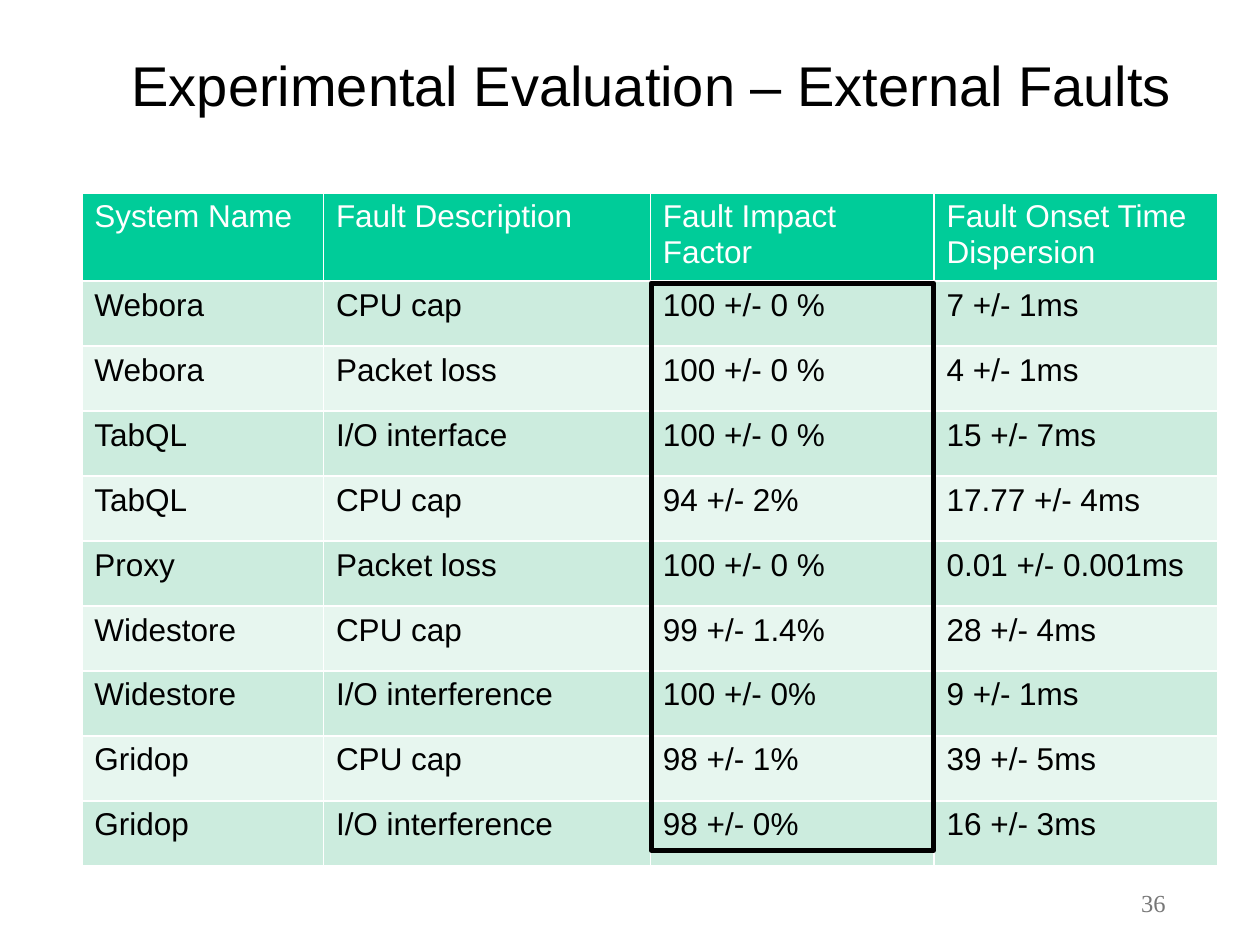
from lxml import etree
from pptx import Presentation
from pptx.dml.color import RGBColor
from pptx.enum.shapes import MSO_SHAPE
from pptx.enum.text import MSO_ANCHOR, PP_ALIGN
from pptx.oxml.ns import qn
from pptx.util import Cm, Pt

RECT = MSO_SHAPE.RECTANGLE
MIDDLE = MSO_ANCHOR.MIDDLE
LEFT, CENTER, RIGHT = PP_ALIGN.LEFT, PP_ALIGN.CENTER, PP_ALIGN.RIGHT

BLACK = RGBColor(0x00, 0x00, 0x00)
WHITE = RGBColor(0xFF, 0xFF, 0xFF)
GREY = RGBColor(0x77, 0x77, 0x77)
GREEN = RGBColor(0x00, 0xCC, 0x99)
BANDS = (RGBColor(0xE7, 0xF6, 0xEF), RGBColor(0xCC, 0xEC, 0xDE))

COL_WIDTHS = (4.87, 6.59, 5.72, 5.71)
HEADER_HEIGHT, ROW_HEIGHT = 1.77, 1.31
ROWS = (
    ("System Name", "Fault Description", "Fault Impact Factor", "Fault Onset Time Dispersion"),
    ("Webora", "CPU cap", "100 +/- 0 %", "7 +/- 1ms"),
    ("Webora", "Packet loss", "100 +/- 0 %", "4 +/- 1ms"),
    ("TabQL", "I/O interface", "100 +/- 0 %", "15 +/- 7ms"),
    ("TabQL", "CPU cap", "94 +/- 2%", "17.77 +/- 4ms"),
    ("Proxy", "Packet loss", "100 +/- 0 %", "0.01 +/- 0.001ms"),
    ("Widestore", "CPU cap", "99 +/- 1.4%", "28 +/- 4ms"),
    ("Widestore", "I/O interference", "100 +/- 0%", "9 +/- 1ms"),
    ("Gridop", "CPU cap", "98 +/- 1%", "39 +/- 5ms"),
    ("Gridop", "I/O interference", "98 +/- 0%", "16 +/- 3ms"),
)


class SlideBuilder:
    """Hold the text style and the current slide, and add its elements."""

    def __init__(self, prs):
        self.style = {"name": "Arial", "size": Pt(18), "bold": False}
        self.slide = prs.slides.add_slide(prs.slide_layouts[5])

    def set_text(self, tf, text, color, align, **fmt):
        tf.word_wrap = True
        p = tf.paragraphs[0]
        p.alignment = align
        r = p.add_run()
        r.text = text
        for key, value in {**self.style, **fmt}.items():
            setattr(r.font, key, value)
        r.font.color.rgb = color

    def title(self, text, x, y, w, h):
        sp = self.slide.shapes.title
        box = {"left": Cm(x), "top": Cm(y), "width": Cm(w), "height": Cm(h)}
        for key, value in box.items():
            setattr(sp, key, value)
        sp.text_frame.vertical_anchor = MIDDLE
        self.set_text(sp.text_frame, text, BLACK, CENTER, size=Pt(32))

    def page_number(self, text, x, y, w, h):
        sp = self.slide.shapes.add_textbox(Cm(x), Cm(y), Cm(w), Cm(h))
        sp.text_frame.vertical_anchor = MIDDLE
        self.set_text(sp.text_frame, text, GREY, RIGHT, name="Times New Roman", size=Pt(14))

    def borders(self, cell, color, width):
        tc_pr = cell._tc.get_or_add_tcPr()
        for side in ("a:lnL", "a:lnR", "a:lnT", "a:lnB"):
            ln = etree.SubElement(tc_pr, qn(side), w=str(width))
            fill = etree.SubElement(ln, qn("a:solidFill"))
            etree.SubElement(fill, qn("a:srgbClr"), val=str(color))

    def table(self, rows, x, y):
        height = HEADER_HEIGHT + ROW_HEIGHT * (len(rows) - 1)
        tbl = self.slide.shapes.add_table(
            len(rows), len(COL_WIDTHS), Cm(x), Cm(y), Cm(sum(COL_WIDTHS)), Cm(height)
        ).table
        for col, width in zip(tbl.columns, COL_WIDTHS):
            col.width = Cm(width)
        for i, values in enumerate(rows):
            tbl.rows[i].height = Cm(ROW_HEIGHT if i else HEADER_HEIGHT)
            for j, text in enumerate(values):
                cell = tbl.cell(i, j)
                self.borders(cell, WHITE, Pt(1))
                cell.fill.solid()
                cell.fill.fore_color.rgb = BANDS[i % 2] if i else GREEN
                self.set_text(cell.text_frame, text, BLACK if i else WHITE, LEFT)

    def frame(self, x, y, w, h):
        sp = self.slide.shapes.add_shape(RECT, Cm(x), Cm(y), Cm(w), Cm(h))
        sp.shadow.inherit = False
        sp.fill.background()
        sp.line.color.rgb = BLACK
        sp.line.width = Pt(3)


def main():
    prs = Presentation()
    prs.slide_width, prs.slide_height = Cm(25.4), Cm(19.05)
    s = SlideBuilder(prs)
    s.title("Experimental Evaluation – External Faults", 1.7, 0.43, 22.89, 2.54)
    s.page_number("36", 18.47, 17.78, 5.28, 0.84)
    s.table(ROWS, 1.65, 3.89)
    s.frame(13.13, 5.71, 5.69, 11.43)
    prs.save("out.pptx")


if __name__ == "__main__":
    main()
